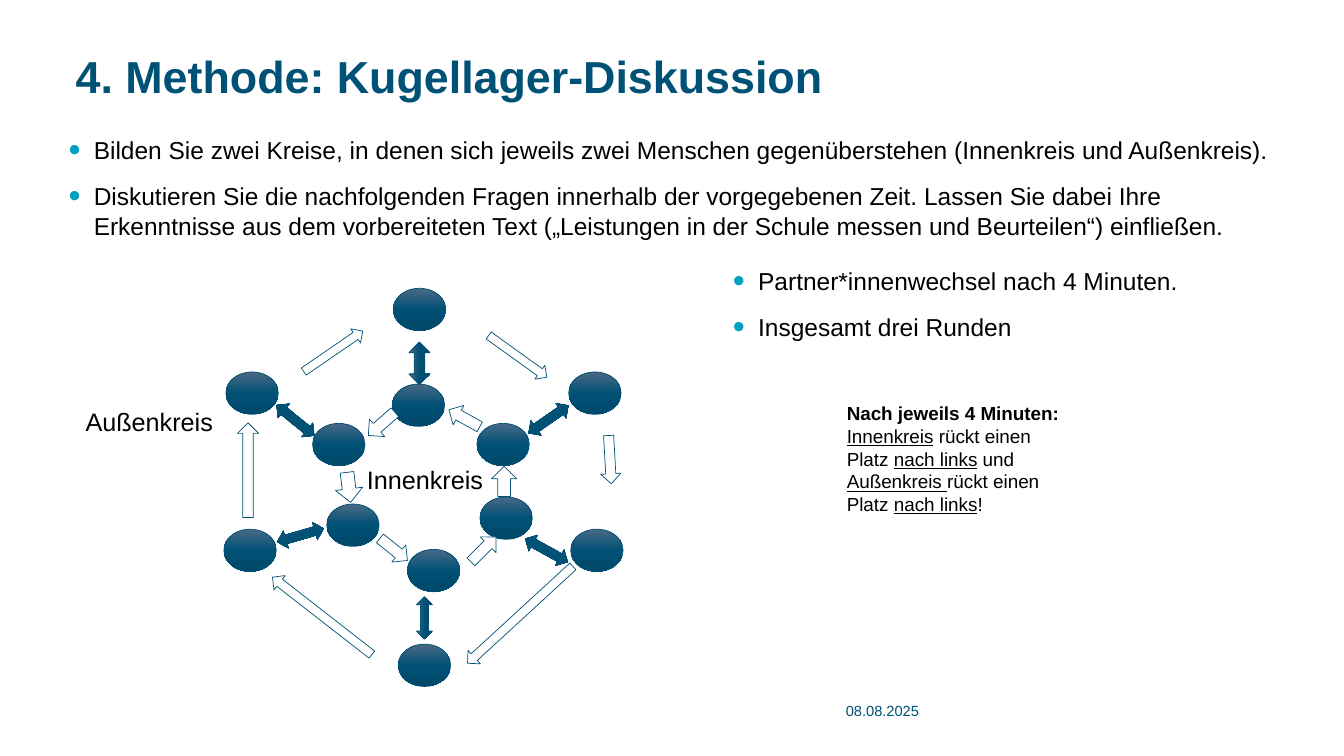
from copy import deepcopy
from lxml import etree
from pptx import Presentation
from pptx.dml.color import RGBColor
from pptx.enum.shapes import MSO_SHAPE as Shape
from pptx.enum.text import MSO_ANCHOR as Anchor
from pptx.oxml.ns import qn
from pptx.util import Inches, Pt

COLORS = {"blue": "005176", "light": "4B6986", "dark": "004869",
          "bullet": "00A1C0", "black": "000000", "white": "FFFFFF"}
FONT = "Arial"

TITLE = "4. Methode: Kugellager-Diskussion"
INSTRUCTIONS = [
    "Bilden Sie zwei Kreise, in denen sich jeweils zwei Menschen gegenüberstehen (Innenkreis und Außenkreis).",
    "Diskutieren Sie die nachfolgenden Fragen innerhalb der vorgegebenen Zeit. Lassen Sie dabei Ihre "
    "Erkenntnisse aus dem vorbereiteten Text („Leistungen in der Schule messen und Beurteilen“) einfließen.",
]
ROUNDS = ["Partner*innenwechsel nach 4 Minuten.", "Insgesamt drei Runden"]
DATE = "08.08.2025"
NOTE_HEADING = "Nach jeweils 4 Minuten:"
# Underlined and plain runs alternate, starting with an underlined one
NOTE_RUNS = ["Innenkreis", " rückt einen Platz ", "nach links", " und",
             " Außenkreis ", "rückt einen Platz ", "nach links", "!"]

# Left and top of each person
PERSON_SIZE = (0.52, 0.42)
INNER_CIRCLE = [(4.04, 5.45), (4.76, 4.93), (3.1, 4.2), (3.24, 5), (3.89, 3.81), (4.73, 4.2)]
OUTER_CIRCLE = [(3.95, 6.39), (2.22, 5.25), (2.24, 3.69), (3.9, 2.86), (5.66, 5.25), (5.64, 3.69)]

# Left, top, width, height, rotation
TALK_ARROWS = [
    (3.95, 3.5, 0.42, 0.21, 270), (5.2, 4.07, 0.48, 0.18, 325.2),
    (5.18, 5.37, 0.48, 0.18, 28.9), (4, 6.05, 0.42, 0.16, 270),
    (2.74, 5.22, 0.48, 0.18, 343.8), (2.69, 4.08, 0.48, 0.18, 219.1),
]
MOVE_ARROWS = [
    # Outer circle
    (5.81, 4.46, 0.48, 0.2, 266.8), (4.78, 3.45, 0.71, 0.17, 215.7),
    (1.99, 4.56, 0.94, 0.21, 90), (4.45, 6.01, 1.42, 0.18, 317.4),
    (2.57, 6.02, 1.25, 0.18, 37.9), (2.95, 3.4, 0.71, 0.17, 145.5),
    # Inner circle
    (3.73, 5.34, 0.35, 0.22, 218.9), (3.31, 4.7, 0.3, 0.27, 263.1),
    (3.61, 4.09, 0.35, 0.23, 318.8), (4.62, 5.34, 0.35, 0.22, 135.2),
    (4.43, 4.04, 0.35, 0.22, 29), (4.85, 4.65, 0.3, 0.25, 90),
]
CIRCLE_LABELS = [("Innenkreis", (3.54, 4.56, 1.52, 0.4)), ("Außenkreis", (0.75, 3.98, 1.5, 0.4))]


def rgb(name):
    return RGBColor.from_string(COLORS[name])


def add_bullet(paragraph):
    properties = paragraph._p.get_or_add_pPr()
    properties.set("marL", str(Inches(0.25)))
    properties.set("indent", str(-Inches(0.25)))
    color = etree.SubElement(properties, qn("a:buClr"))
    etree.SubElement(color, qn("a:srgbClr"), val=COLORS["bullet"])
    etree.SubElement(properties, qn("a:buSzPct"), val="140000")
    etree.SubElement(properties, qn("a:buFont"), typeface=FONT)
    etree.SubElement(properties, qn("a:buChar"), char="•")


def add_text(paragraphs, box, size, color="black", bold=False, inset=True,
             bullets=False, spacing=None, anchor=Anchor.TOP):
    """Each paragraph is a list of (text, format) runs or a plain string."""
    frame = slide.shapes.add_textbox(*map(Inches, box)).text_frame
    frame.word_wrap = True
    frame.vertical_anchor = anchor
    if not inset:
        frame.margin_left = frame.margin_right = frame.margin_top = frame.margin_bottom = 0
    for index, runs in enumerate(paragraphs):
        paragraph = frame.add_paragraph() if index else frame.paragraphs[0]
        if bullets:
            add_bullet(paragraph)
            paragraph.space_after = Pt(12)
        if spacing:
            paragraph.line_spacing = spacing
        for text, style in [(runs, {})] if isinstance(runs, str) else runs:
            run = paragraph.add_run()
            run.text = text
            run.font.name, run.font.size = FONT, Pt(size)
            run.font.color.rgb = rgb(color)
            run.font.bold = style.get("bold", bold)
            run.font.underline = style.get("underline", False)


def fill_gradient(shape):
    shape.fill.gradient()
    shape.fill.gradient_angle = 270
    stop_list = shape._element.spPr.find(qn("a:gradFill")).find(qn("a:gsLst"))
    stop_list.insert(1, deepcopy(stop_list[0]))
    for stop, position, name in zip(shape.fill.gradient_stops, (0, 0.5, 1), ("light", "blue", "dark")):
        stop.position = position
        stop.color.rgb = rgb(name)


def add_figure(kind, left, top, width, height, rotation=0, gradient=True):
    shape = slide.shapes.add_shape(kind, *map(Inches, (left, top, width, height)))
    shape.rotation = rotation
    shape.shadow.inherit = False
    if gradient:
        fill_gradient(shape)
    else:
        shape.fill.solid()
        shape.fill.fore_color.rgb = rgb("white")
    shape.line.color.rgb = rgb("blue")
    shape.line.width = Pt(0.5)


presentation = Presentation()
presentation.slide_width, presentation.slide_height = Inches(13.33), Inches(7.5)
slide = presentation.slides.add_slide(presentation.slide_layouts[6])

# Title, instructions and date
add_text(INSTRUCTIONS, (0.68, 1.34, 11.98, 1.26), 17.5, inset=False, bullets=True)
add_text([TITLE], (0.75, 0.54, 11.98, 0.67), 32, color="blue", bold=True, inset=False, spacing=0.9)
add_text([DATE], (8.39, 6.92, 1.34, 0.27), 10.5, color="blue", inset=False, anchor=Anchor.MIDDLE)

# Note on changing places
note = [(text, {"underline": index % 2 == 0}) for index, text in enumerate(NOTE_RUNS)]
add_text([[(NOTE_HEADING, {"bold": True})], note], (8.3, 3.94, 2.35, 1.24), 13.5)

# Two circles of people with arrows
for left, top in INNER_CIRCLE + OUTER_CIRCLE:
    add_figure(Shape.OVAL, left, top, *PERSON_SIZE)
for arrow in TALK_ARROWS:
    add_figure(Shape.LEFT_RIGHT_ARROW, *arrow)
for arrow in MOVE_ARROWS:
    add_figure(Shape.LEFT_ARROW, *arrow, gradient=False)
for label, box in CIRCLE_LABELS:
    add_text([label], box, 18)

# Rounds
add_text(ROUNDS, (7.27, 2.64, 4.73, 0.94), 17.5, inset=False, bullets=True)

presentation.save("out.pptx")
